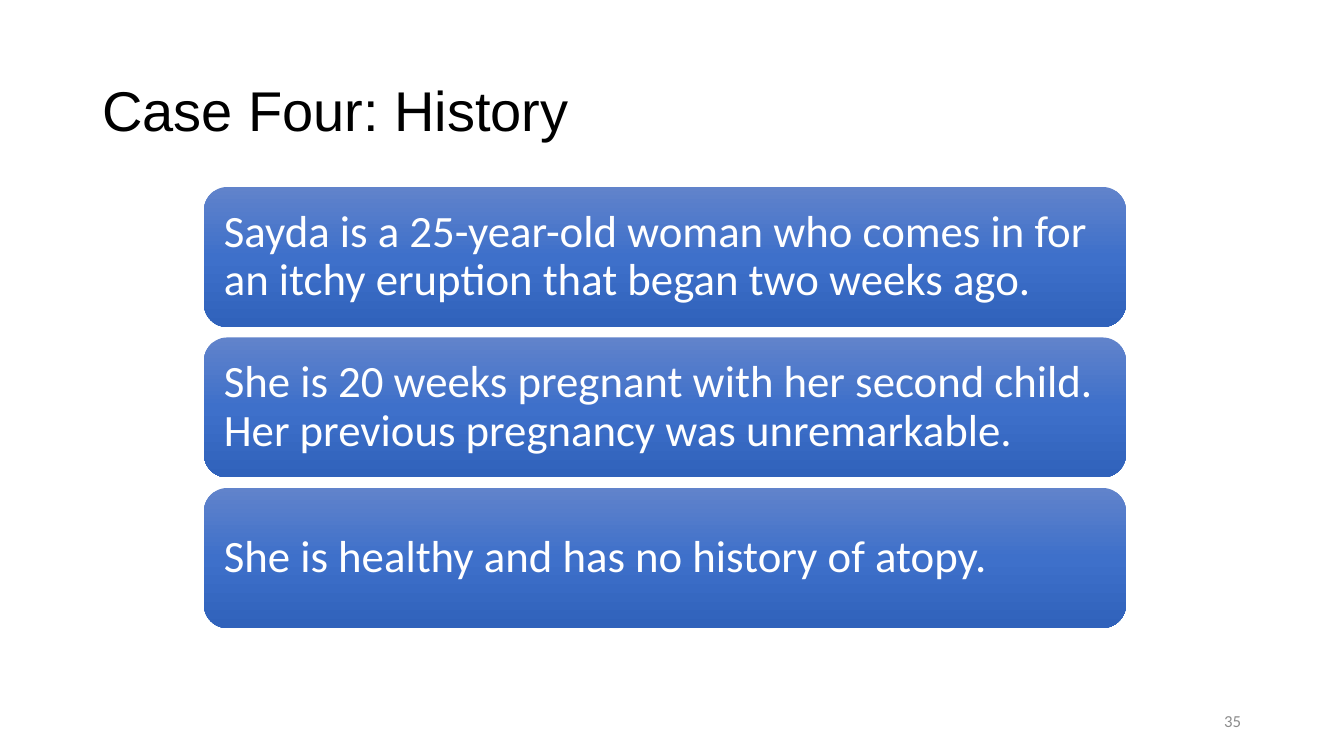
import copy

import pptx
import pptx.dml.color
import pptx.enum.shapes
import pptx.enum.text
import pptx.util

RGBColor = pptx.dml.color.RGBColor
ALIGN = pptx.enum.text.PP_ALIGN
MIDDLE = pptx.enum.text.MSO_ANCHOR.MIDDLE

# Content
TITLE = "Case Four: History"
HISTORY = [
    "Sayda is a 25-year-old woman who comes in for an itchy eruption that began two weeks ago.",
    "She is 20 weeks pregnant with her second child. Her previous pregnancy was unremarkable.",
    "She is healthy and has no history of atopy.",
]
PAGE = "35"

# Colours
BLACK = RGBColor(0x00, 0x00, 0x00)
WHITE = RGBColor(0xFF, 0xFF, 0xFF)
GREY = RGBColor(0x8C, 0x8C, 0x8C)
CARD_STOPS = [
    (0, RGBColor(0x61, 0x83, 0xCB)),
    (0.5, RGBColor(0x3E, 0x70, 0xCA)),
    (1, RGBColor(0x30, 0x62, 0xBB)),
]

# Layout in px
SLIDE_SIZE = (1344, 756)
TITLE_BOX = (92, 40, 1159, 146)
PAGE_BOX = (949, 701, 302, 40)
CARD_LEFT, CARD_WIDTH, CARD_HEIGHT = 204, 922, 140
STACK_TOP, STACK_BOTTOM = 187, 628
CARD_INSET = 13  # the rounded corners add about 7 more


def px(length):
    return pptx.util.Emu(round(length * 914400 / 100.8))


def write(shape, text, font, size, colour, align=ALIGN.LEFT, spacing=1.0):
    frame = shape.text_frame
    frame.word_wrap = True
    frame.vertical_anchor = MIDDLE
    frame.text = text
    paragraph = frame.paragraphs[0]
    paragraph.alignment = align
    paragraph.line_spacing = spacing
    paragraph.font.name = font
    paragraph.font.size = pptx.util.Pt(size)
    paragraph.font.color.rgb = colour


def fill_gradient(fill, stops):
    fill.gradient()
    fill.gradient_angle = 270
    # The preset gradient has two stops: add the third
    stop_list = fill._fill._gradFill.gsLst
    stop_list.append(copy.deepcopy(stop_list[0]))
    for stop, (position, colour) in zip(fill.gradient_stops, stops):
        stop.position = position
        stop.color.rgb = colour


deck = pptx.Presentation()
deck.slide_width, deck.slide_height = map(px, SLIDE_SIZE)
slide = deck.slides.add_slide(deck.slide_layouts[5])

# Title
title = slide.shapes.title
title.left, title.top, title.width, title.height = map(px, TITLE_BOX)
write(title, TITLE, "Arial", 40, BLACK, spacing=0.9)

# History cards, evenly spread over the stack
pitch = (STACK_BOTTOM - STACK_TOP - CARD_HEIGHT) / (len(HISTORY) - 1)
for index, statement in enumerate(HISTORY):
    card = slide.shapes.add_shape(
        pptx.enum.shapes.MSO_SHAPE.ROUNDED_RECTANGLE,
        px(CARD_LEFT), px(STACK_TOP + index * pitch), px(CARD_WIDTH), px(CARD_HEIGHT))
    card.shadow.inherit = False
    card.line.fill.background()
    fill_gradient(card.fill, CARD_STOPS)
    frame = card.text_frame
    frame.margin_left = frame.margin_right = px(CARD_INSET)
    frame.margin_top = frame.margin_bottom = px(CARD_INSET)
    write(card, statement, "Calibri", 32, WHITE, spacing=0.9)

# Page number
page = slide.shapes.add_textbox(*map(px, PAGE_BOX))
write(page, PAGE, "Calibri", 12, GREY, align=ALIGN.RIGHT)

deck.save("out.pptx")
